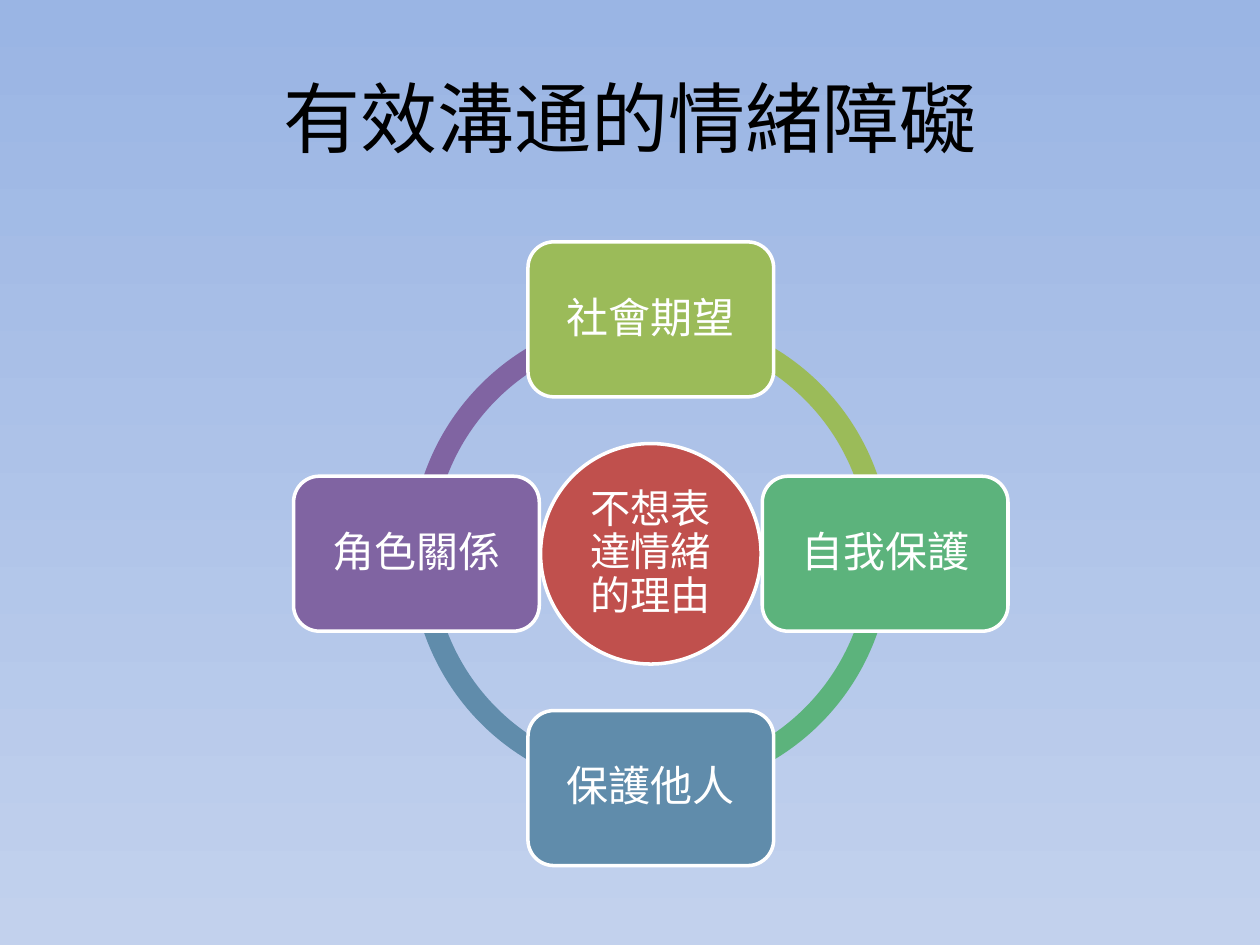
from lxml.etree import SubElement
from pptx import Presentation
from pptx.dml.color import RGBColor
from pptx.enum.shapes import MSO_SHAPE
from pptx.enum.text import MSO_ANCHOR, PP_ALIGN
from pptx.oxml.ns import qn
from pptx.util import Inches, Pt

SKY_TOP = RGBColor(0x9A, 0xB5, 0xE4)
SKY_BOTTOM = RGBColor(0xC2, 0xD1, 0xED)
BLACK = RGBColor(0x00, 0x00, 0x00)
WHITE = RGBColor(0xFF, 0xFF, 0xFF)
RED = RGBColor(0xC0, 0x50, 0x4D)
OLIVE = RGBColor(0x9B, 0xBB, 0x59)
GREEN = RGBColor(0x5C, 0xB3, 0x7C)
BLUE = RGBColor(0x60, 0x8C, 0xAB)
PURPLE = RGBColor(0x80, 0x64, 0xA2)

FONT = "Noto Sans CJK SC"
BARRIERS = [
    ("社會期望", OLIVE, (0, -1), (162, 0)),
    ("自我保護", GREEN, (1, 0), (0, 54)),
    ("保護他人", BLUE, (0, 1), (54, 108)),
    ("角色關係", PURPLE, (-1, 0), (108, 162)),
]


def apply(target, values):
    for name, value in values.items():
        setattr(target, name, value)


def write(shape, text, size, color, margin, spacing):
    frame = shape.text_frame
    apply(frame, {
        "word_wrap": True,
        "vertical_anchor": MSO_ANCHOR.MIDDLE,
        "margin_left": margin,
        "margin_right": margin,
        "margin_top": margin,
        "margin_bottom": margin,
    })
    paragraph = frame.paragraphs[0]
    apply(paragraph, {"alignment": PP_ALIGN.CENTER, "line_spacing": spacing})
    run = paragraph.add_run()
    run.text = text
    apply(run.font, {"size": Pt(size), "name": FONT})
    run.font.color.rgb = color
    SubElement(run.font._element, qn("a:ea"), typeface=FONT)


def add_filled(slide, preset, box, color):
    shape = slide.shapes.add_shape(preset, *box)
    shape.shadow.inherit = False
    shape.fill.solid()
    shape.fill.fore_color.rgb = color
    return shape


def add_arc(slide, box, color, angles):
    arc = add_filled(slide, MSO_SHAPE.BLOCK_ARC, box, color)
    arc.line.fill.background()
    for index, value in enumerate((*angles, 0.046)):
        arc.adjustments[index] = value


def add_node(slide, preset, center, size, color, text, text_size):
    box = [middle - length // 2 for middle, length in zip(center, size)]
    node = add_filled(slide, preset, (*box, *size), color)
    node.line.color.rgb = WHITE
    node.line.width = Pt(2)
    write(node, text, text_size, WHITE, Inches(0.03), 0.9)


def add_background(slide):
    fill = slide.background.fill
    fill.gradient()
    fill.gradient_angle = 270
    for stop, color in zip(fill.gradient_stops, (SKY_TOP, SKY_BOTTOM)):
        stop.color.rgb = color


def add_title(slide, box):
    title = slide.shapes.add_textbox(*box)
    write(title, "有效溝通的情緒障礙", 44, BLACK, Inches(0.05), 1.0)


def add_cycle(slide, box):
    left, top, width, height = box
    center = (left + width // 2, top + height // 2)
    node_size = (Inches(1.95), Inches(1.23))
    reach = (height - node_size[1]) // 2
    ring = Inches(3.81)
    ring_box = (center[0] - ring // 2, center[1] - ring // 2, ring, ring)

    for _, color, _, angles in reversed(BARRIERS):
        add_arc(slide, ring_box, color, angles)
    add_node(slide, MSO_SHAPE.OVAL, center, (Inches(1.75), Inches(1.75)),
             RED, "不想表達情緒的理由", 23)
    for text, color, direction, _ in BARRIERS:
        position = [c + d * reach for c, d in zip(center, direction)]
        add_node(slide, MSO_SHAPE.ROUNDED_RECTANGLE, position, node_size,
                 color, text, 24)


def main():
    deck = Presentation()
    deck.slide_width = Inches(10)
    deck.slide_height = Inches(7.5)
    slide = deck.slides.add_slide(deck.slide_layouts[6])
    add_background(slide)
    add_title(slide, (Inches(0.5), Inches(0.3), Inches(9), Inches(1.25)))
    add_cycle(slide, (Inches(2.33), Inches(1.92), Inches(5.67), Inches(4.95)))
    deck.save("out.pptx")


if __name__ == "__main__":
    main()
